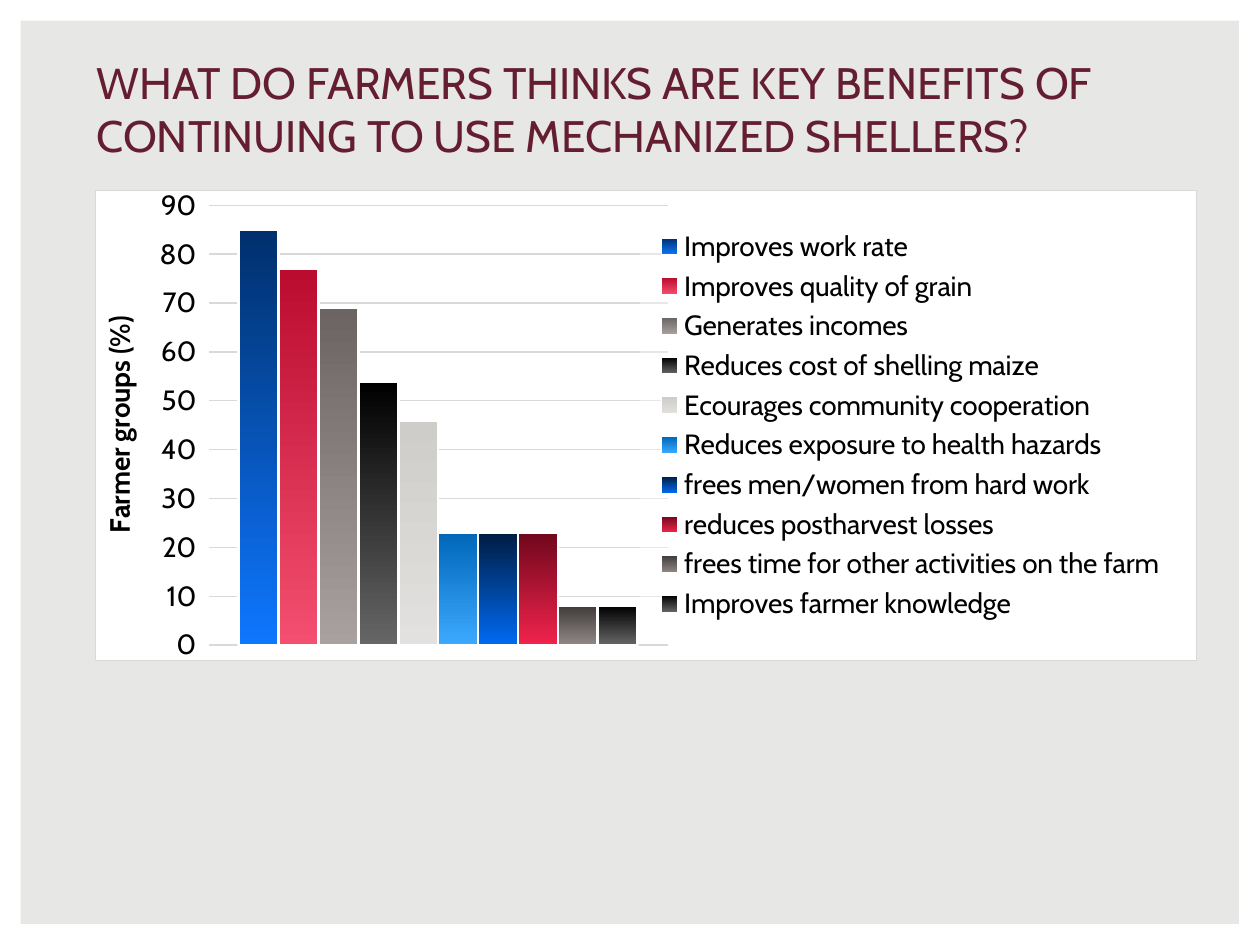
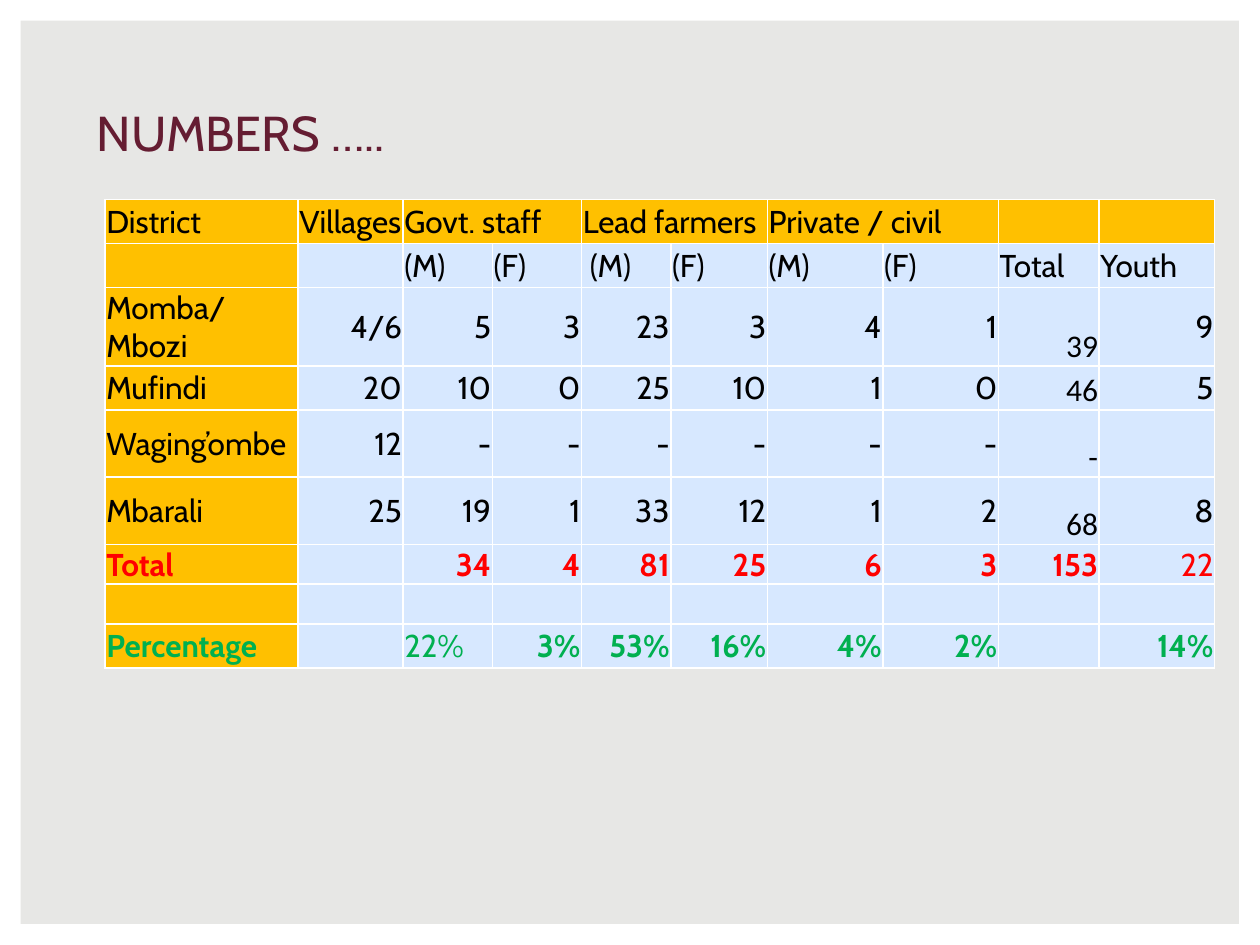
from dataclasses import dataclass

from lxml.etree import SubElement, fromstring
from pptx import Presentation
from pptx.chart.data import CategoryChartData
from pptx.dml.color import RGBColor
from pptx.enum.chart import XL_CHART_TYPE, XL_LEGEND_POSITION, XL_TICK_MARK
from pptx.enum.shapes import MSO_SHAPE
from pptx.enum.text import MSO_ANCHOR, MSO_AUTO_SIZE, PP_ALIGN
from pptx.oxml.ns import nsdecls, qn
from pptx.util import Inches, Pt

COLORS = {
    "back": "E7E7E5", "white": "FFFFFF", "ink": "000000", "title": "651D32",
    "grid": "D9D9D9", "gold": "FFC000", "pale": "D7E8FF",
    "red": "FF0000", "green": "00B050",
}
FONT = "Cabin"
UNIT = Inches(1) // 12  # the slide is a grid of 120 columns and 90 rows
WIDE, HIGH = 120, 90
MID, LOW = MSO_ANCHOR.MIDDLE, MSO_ANCHOR.BOTTOM


@dataclass(frozen=True)
class Box:
    """A place on the slide, in grid columns and rows."""
    left: float
    top: float
    width: float
    height: float

    def emu(self) -> list[int]:
        return [span(n) for n in (self.left, self.top, self.width, self.height)]


@dataclass(frozen=True)
class Bar:
    name: str
    value: int
    dark: str
    light: str


BARS = [
    Bar("Improves work rate", 85, "002F6C", "0E77FF"),
    Bar("Improves quality of grain", 77, "BA0C2F", "F44F70"),
    Bar("Generates incomes", 69, "6C6463", "A8A1A0"),
    Bar("Reduces cost of shelling maize", 54, "000000", "666666"),
    Bar("Ecourages community cooperation", 46, "CFCDC9", "E2E1DF"),
    Bar("Reduces exposure to health hazards", 23, "0067B9", "3CA9FF"),
    Bar("frees men/women from hard work", 23, "001C41", "006AF3"),
    Bar("reduces postharvest losses", 23, "70071C", "F1234C"),
    Bar("frees time for other activities on the farm", 8, "413C3B", "908786"),
    Bar("Improves farmer knowledge", 8, "000000", "666666"),
]

COLS = [18.4, 10, 8.5, 8.5, 8.5, 9.2, 11, 11, 9.6, 11]
ROWS = [4.2, 4.2, 4.2, 4.2, 6.4, 6.4, 3.6, 3.6, 4.2]
CELLS = [
    ["District", "Villages", "Govt. staff", "", "Lead farmers", "",
     "Private / civil", "", "", ""],
    ["", "", "(M)", "(F)", " (M)", "(F)", "(M)", "(F)", "Total", "Youth"],
    ["Momba/ Mbozi", "4/6", "5", "3", "23", "3", "4", "1", "39", "9"],
    ["Mufindi", "20", "10", "0", "25", "10", "1", "0", "46", "5"],
    ["Waging’ombe", "12", "-", "-", "-", "-", "-", "-", "-", ""],
    ["Mbarali", "25", "19", "1", "33", "12", "1", "2", "68", "8"],
    ["Total", "", "34", "4", "81", "25", "6", "3", "153", "22"],
    [""] * len(COLS),
    ["Percentage", "", "22%", "3%", "53%", "16%", "4%", "2%", "", "14%"],
]
HEADS = 2
SUM, SHARE = 6, 8
TINTS = {SUM: "red", SHARE: "green"}
PAIRS = (2, 4, 6)
TOTAL = 8
LIGHT = {(SUM, 9), (SHARE, 2)}


def span(units: float) -> int:
    return round(units * UNIT)


def rgb(name: str) -> RGBColor:
    """Take a key of COLORS or a hex string."""
    return RGBColor.from_string(COLORS.get(name, name))


def write(frame, text: str, *, size: float, color: str = "ink",
          font: str = FONT, bold: bool = False, align=PP_ALIGN.LEFT) -> None:
    para = frame.paragraphs[0]
    para.alignment = align
    run = para.add_run()
    run.text = text
    run.font.size, run.font.name, run.font.bold = Pt(size), font, bold
    run.font.color.rgb = rgb(color)


def start(deck, text: str, width: float, size: float):
    """Add a slide with the white frame and its title."""
    slide = deck.slides.add_slide(deck.slide_layouts.get_by_name("Title Only"))
    edge = slide.shapes.add_shape(MSO_SHAPE.FRAME, *Box(0, 0, WIDE, HIGH).emu())
    edge.adjustments[0] = 0.022
    edge.shadow.inherit = False
    edge.fill.solid()
    edge.fill.fore_color.rgb = rgb("white")
    edge.line.fill.background()
    title = slide.shapes.title
    title.element.addprevious(edge.element)
    title.left, title.top, title.width, title.height = Box(8, 8, width, 8).emu()
    frame = title.text_frame
    frame.word_wrap = True
    frame.auto_size = MSO_AUTO_SIZE.NONE
    frame.vertical_anchor = LOW
    write(frame, text, size=size, color="title")
    return slide


def layout(box: tuple, inner: bool = False):
    """Build a manual chart layout from shares of the chart's size."""
    root = fromstring(f"<c:layout {nsdecls('c')}><c:manualLayout/></c:layout>")
    marks = [("layoutTarget", "inner")] if inner else []
    marks += [("xMode", "edge"), ("yMode", "edge"), *zip("xywh", box)]
    for tag, val in marks:
        SubElement(root[0], qn(f"c:{tag}")).set("val", str(val))
    return root


def plate(alpha: int = 100, line: str = "<a:noFill/>"):
    """Build white chart shape properties, with opacity in percent."""
    return fromstring(
        f'<c:spPr {nsdecls("c", "a")}><a:solidFill><a:srgbClr val="{COLORS["white"]}">'
        f'<a:alpha val="{alpha * 1000}"/></a:srgbClr></a:solidFill>'
        f'<a:ln w="{Pt(0.75)}">{line}</a:ln></c:spPr>')


def style(chart) -> None:
    """Set the chart's axes, legend and background."""
    chart.has_title = False
    chart.font.size, chart.font.name = Pt(16), FONT
    chart.font.color.rgb = rgb("ink")
    chart.category_axis.visible = False
    axis = chart.value_axis
    axis.minimum_scale, axis.maximum_scale, axis.major_unit = 0, 90, 10
    axis.major_tick_mark = XL_TICK_MARK.OUTSIDE
    axis.format.line.fill.background()
    rule = axis.major_gridlines.format.line
    rule.color.rgb, rule.width = rgb("grid"), Pt(0.75)
    write(axis.axis_title.text_frame, "Farmer groups (%)", size=16, bold=True,
          align=PP_ALIGN.CENTER)
    chart.has_legend = True
    key = chart.legend
    key.position, key.include_in_layout = XL_LEGEND_POSITION.RIGHT, False
    key.font.size, key.font.name = Pt(16), FONT
    key.font.color.rgb = rgb("ink")

    root = chart.element if hasattr(chart, "element") else chart._chartSpace
    line = f'<a:solidFill><a:srgbClr val="{COLORS["grid"]}"/></a:solidFill>'
    root.find(qn("c:txPr")).addprevious(plate(line=line))
    area = root.find(".//" + qn("c:plotArea"))
    for old in area.findall(qn("c:layout")):
        area.remove(old)
    area.insert(0, layout((0.103, 0.032, 0.417, 0.935), inner=True))
    legend = root.find(".//" + qn("c:legend"))
    for old in legend.findall(qn("c:layout")):
        legend.remove(old)
    legend.find(qn("c:legendPos")).addnext(layout((0.495, 0.07, 0.49, 0.86)))
    legend.find(qn("c:txPr")).addprevious(plate(alpha=39))


def plot(slide) -> None:
    data = CategoryChartData()
    data.categories = ["1"]
    for bar in BARS:
        data.add_series(bar.name, [bar.value])
    chart = slide.shapes.add_chart(XL_CHART_TYPE.COLUMN_CLUSTERED,
                                   *Box(9, 18, 105, 45).emu(), data).chart
    style(chart)
    group = chart.plots[0]
    group.gap_width, group.overlap, group.vary_by_categories = 150, 0, False
    for bar, item in zip(BARS, group.series):
        look = item.format
        look.fill.gradient()
        look.fill.gradient_angle = 270
        for stop, tone in zip(look.fill.gradient_stops, (bar.dark, bar.light)):
            stop.color.rgb = rgb(tone)
        look.line.color.rgb, look.line.width = rgb("white"), Pt(1.5)


def border(cell) -> None:
    props = cell._tc.get_or_add_tcPr()
    for spot, side in enumerate("LRTB"):
        props.insert(spot, fromstring(
            f'<a:ln{side} {nsdecls("a")} w="{Pt(1)}"><a:solidFill>'
            f'<a:srgbClr val="{COLORS["white"]}"/></a:solidFill></a:ln{side}>'))


def fill(cell, row: int, col: int, text: str) -> None:
    """Colour a cell and write its text by the rules of its row and column."""
    cell.margin_left = cell.margin_right = cell.margin_top = Inches(0.01)
    cell.margin_bottom = 0
    cell.fill.solid()
    cell.fill.fore_color.rgb = rgb("pale" if row and col else "gold")
    border(cell)
    sums = col == TOTAL and HEADS <= row < SUM
    cell.vertical_anchor = LOW if sums else MID
    if text:
        left = row < HEADS or col == 0 or (row, col) == (SHARE, 2)
        write(cell.text_frame, text, size=18, color=TINTS.get(row, "ink"),
              font="Calibri" if sums else FONT,
              bold=row in TINTS and (row, col) not in LIGHT,
              align=PP_ALIGN.LEFT if left else PP_ALIGN.RIGHT)


def tabulate(slide) -> None:
    box = Box(10, 19, sum(COLS), sum(ROWS))
    table = slide.shapes.add_table(len(ROWS), len(COLS), *box.emu()).table
    table.first_row = table.horz_banding = False
    for col, width in zip(table.columns, COLS):
        col.width = span(width)
    for row, height in zip(table.rows, ROWS):
        row.height = span(height)
    for row, line in enumerate(CELLS):
        for col, text in enumerate(line):
            fill(table.cell(row, col), row, col, text)
    for col in PAIRS:
        table.cell(0, col).merge(table.cell(0, col + 1))


def main() -> None:
    deck = Presentation()
    deck.slide_width, deck.slide_height = span(WIDE), span(HIGH)
    back = deck.slide_master.background.fill
    back.solid()
    back.fore_color.rgb = rgb("back")
    plot(start(deck, "WHAT DO FARMERS THINKS ARE KEY BENEFITS OF CONTINUING "
                     "TO USE MECHANIZED SHELLERS?", 108, 25.2))
    tabulate(start(deck, "NUMBERS …..", 52, 28))
    deck.save("out.pptx")


if __name__ == "__main__":
    main()
